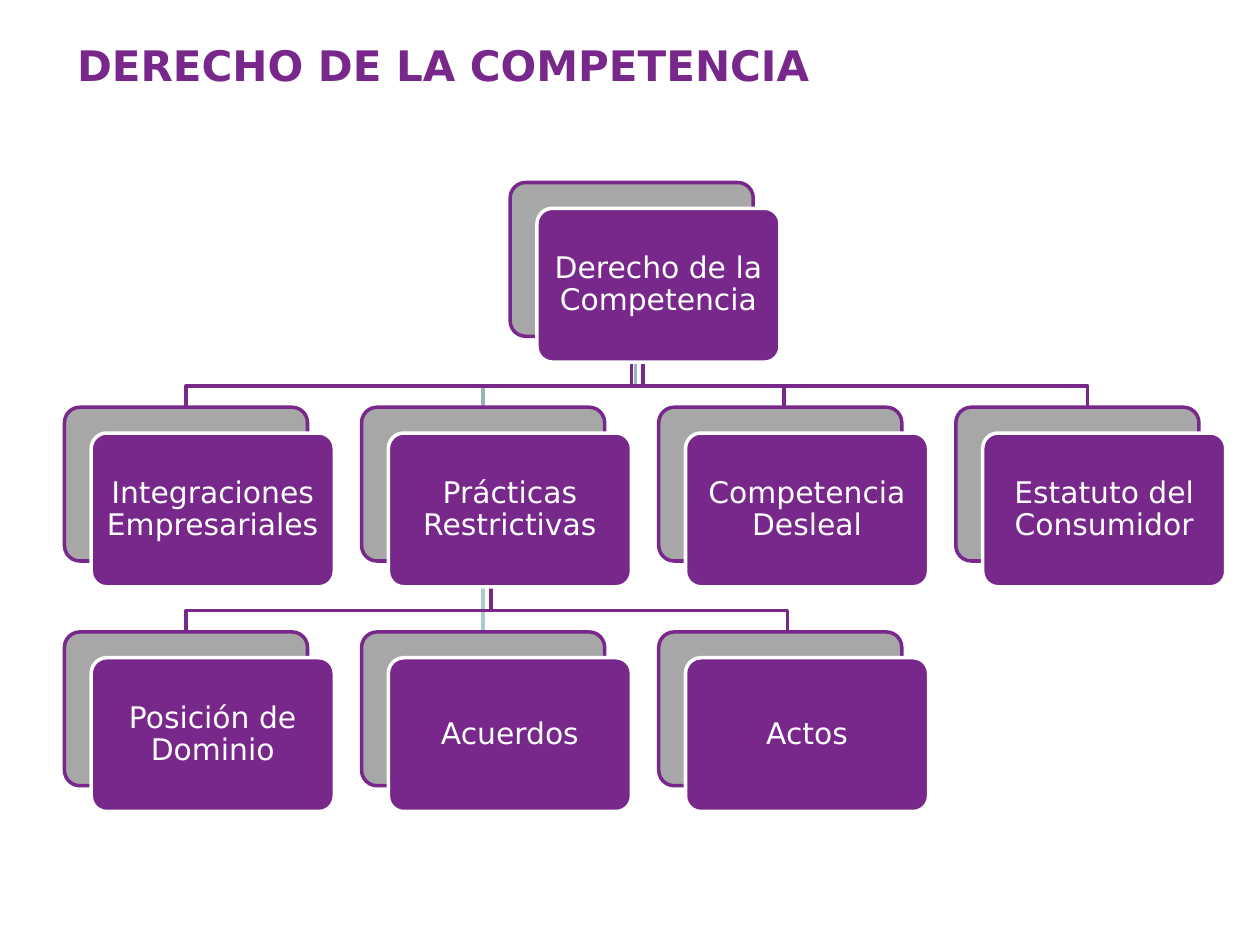
from lxml.etree import SubElement
from pptx import Presentation
from pptx.dml.color import RGBColor
from pptx.enum.shapes import MSO_CONNECTOR, MSO_SHAPE
from pptx.enum.text import MSO_ANCHOR, MSO_AUTO_SIZE, PP_ALIGN
from pptx.oxml.ns import qn
from pptx.util import Cm, Pt

FONT = "DejaVu Sans"
PURPLE, GREY, WHITE = "78278B", "A7A7A7", "FFFFFF"
TEAL, PALE_TEAL = "96B3B6", "AACBCE"

# Grid of cards, in centimetres
LEFT, TOP = 1.3, 3.68
COLUMN_STEP, ROW_STEP = 5.99, 4.53
CARD_WIDTH, CARD_HEIGHT = 4.9, 3.1
FRONT_RIGHT, FRONT_DOWN = 0.54, 0.52
CARD_INSET = 0.1
BUS_RISE = 0.43

# Card text: (column, row)
CARDS = {
    "Derecho de la Competencia": (1.5, 0),
    "Integraciones Empresariales": (0, 1),
    "Prácticas Restrictivas": (1, 1),
    "Posición de Dominio": (0, 2),
    "Acuerdos": (1, 2),
    "Actos": (2, 2),
    "Competencia Desleal": (2, 1),
    "Estatuto del Consumidor": (3, 1),
}

# Front to back: parent, child, trunk shift, drop shift, colour
ROOT, PRACTICES = "Derecho de la Competencia", "Prácticas Restrictivas"
BRANCHES = [
    (ROOT, "Integraciones Empresariales", 0.23, 0, PURPLE),
    (ROOT, PRACTICES, 0.08, 0, TEAL),
    (PRACTICES, "Posición de Dominio", 0.16, 0, PURPLE),
    (PRACTICES, "Acuerdos", 0, 0, PALE_TEAL),
    (PRACTICES, "Actos", 0, 0.15, PURPLE),
    (ROOT, "Competencia Desleal", 0, 0.07, PURPLE),
    (ROOT, "Estatuto del Consumidor", 0, 0.2, PURPLE),
]


def color(hex_value):
    return RGBColor.from_string(hex_value)


def set_line(shape, hex_value):
    shape.line.color.rgb = color(hex_value)
    shape.line.width = Pt(2)


def set_attributes(target, values):
    for name, value in values.items():
        setattr(target, name, value)


def write_text(frame, text, size, hex_value, align, spacing=1.0, bold=False):
    frame.text = text
    set_attributes(frame, {"word_wrap": True,
                           "auto_size": MSO_AUTO_SIZE.NONE,
                           "vertical_anchor": MSO_ANCHOR.MIDDLE})
    paragraph = frame.paragraphs[0]
    set_attributes(paragraph, {"alignment": align, "line_spacing": spacing,
                               "space_before": Pt(0)})
    font = paragraph.runs[0].font
    set_attributes(font, {"name": FONT, "size": Pt(size), "bold": bold})
    font.color.rgb = color(hex_value)


def add_title(slide, text):
    title = slide.shapes.title
    set_attributes(title, {"left": Cm(LEFT), "top": Cm(0.53),
                           "width": Cm(23.39), "height": Cm(1.55)})
    write_text(title.text_frame, text, 24, PURPLE, PP_ALIGN.LEFT, bold=True)


def add_panel(slide, left, top, fill, outline):
    panel = slide.shapes.add_shape(
        MSO_SHAPE.ROUNDED_RECTANGLE,
        Cm(left), Cm(top), Cm(CARD_WIDTH), Cm(CARD_HEIGHT))
    panel.adjustments[0] = 0.1
    panel.shadow.inherit = False
    panel.fill.solid()
    panel.fill.fore_color.rgb = color(fill)
    set_line(panel, outline)
    return panel


def add_card(slide, text, column, row):
    """Add a grey back panel and a labelled front panel; return the back."""
    left, top = LEFT + column * COLUMN_STEP, TOP + row * ROW_STEP
    back = add_panel(slide, left, top, GREY, PURPLE)
    front = add_panel(slide, left + FRONT_RIGHT, top + FRONT_DOWN,
                      PURPLE, WHITE)
    inset = Cm(CARD_INSET)
    set_attributes(front.text_frame, {
        "margin_left": inset, "margin_right": inset,
        "margin_top": inset, "margin_bottom": inset})
    write_text(front.text_frame, text, 17, WHITE, PP_ALIGN.CENTER, 0.9)
    return back


def add_straight_branch(slide, parent, child):
    branch = slide.shapes.add_connector(MSO_CONNECTOR.STRAIGHT, 0, 0, 0, 0)
    branch.begin_connect(parent, 2)
    branch.end_connect(child, 0)
    return branch


def add_elbow_branch(slide, parent, child, trunk_shift, drop_shift):
    trunk = parent.left + parent.width // 2 + Cm(trunk_shift)
    drop = child.left + child.width // 2 + Cm(drop_shift)
    bus = child.top - Cm(BUS_RISE)
    builder = slide.shapes.build_freeform(trunk, parent.top + parent.height)
    builder.add_line_segments(
        [(trunk, bus), (drop, bus), (drop, child.top)], close=False)
    branch = builder.convert_to_shape()
    branch.fill.background()
    return branch


def add_branch(slide, parent, child, trunk_shift, drop_shift, hex_value):
    if parent.left == child.left:
        branch = add_straight_branch(slide, parent, child)
    else:
        branch = add_elbow_branch(slide, parent, child,
                                  trunk_shift, drop_shift)
    set_line(branch, hex_value)
    SubElement(branch.element.spPr, qn("a:effectLst"))
    # Send behind everything drawn so far
    slide.shapes.element.insert(2, branch.element)


def main():
    presentation = Presentation()
    presentation.slide_width, presentation.slide_height = Cm(25.4), Cm(19.05)
    slide = presentation.slides.add_slide(presentation.slide_layouts[5])

    add_title(slide, "DERECHO DE LA COMPETENCIA")

    # Cards first, so that branches can join them
    backs = {text: add_card(slide, text, column, row)
             for text, (column, row) in CARDS.items()}
    for parent, child, trunk_shift, drop_shift, hex_value in BRANCHES:
        add_branch(slide, backs[parent], backs[child],
                   trunk_shift, drop_shift, hex_value)

    presentation.save("out.pptx")


if __name__ == "__main__":
    main()
